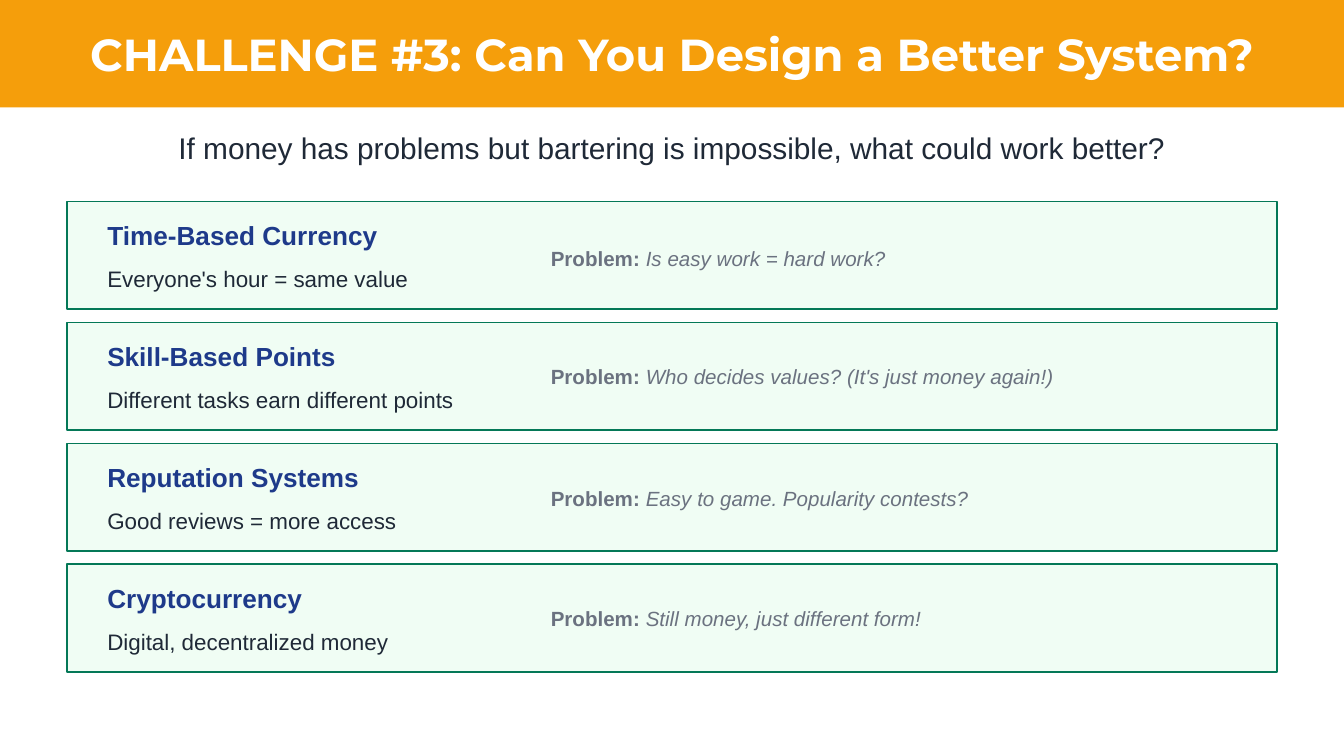
import pptx
import pptx.dml.color
import pptx.enum.shapes
import pptx.enum.text
import pptx.util

RGBColor = pptx.dml.color.RGBColor
PP_ALIGN = pptx.enum.text.PP_ALIGN

PX = 4572  # EMU per px, 200 px to the inch
SLIDE_WIDTH, SLIDE_HEIGHT = 2000, 1125

ORANGE = RGBColor(0xF5, 0x9E, 0x0B)
WHITE = RGBColor(0xFF, 0xFF, 0xFF)
MINT = RGBColor(0xF0, 0xFD, 0xF4)
GREEN = RGBColor(0x04, 0x78, 0x57)
NAVY = RGBColor(0x1E, 0x3A, 0x8A)
INK = RGBColor(0x1F, 0x29, 0x37)
GRAY = RGBColor(0x6B, 0x72, 0x80)

MARGIN = 100
CONTENT_WIDTH = SLIDE_WIDTH - 2 * MARGIN
BAND_HEIGHT = 160
CARD_TOP, CARD_HEIGHT, CARD_PITCH = 300, 160, 180

# Name, idea, problem, top of the problem line within its card
SYSTEMS = [
    ("Time-Based Currency", "Everyone's hour = same value",
     "Is easy work = hard work?", 44),
    ("Skill-Based Points", "Different tasks earn different points",
     "Who decides values? (It's just money again!)", 40),
    ("Reputation Systems", "Good reviews = more access",
     "Easy to game. Popularity contests?", 42),
    ("Cryptocurrency", "Digital, decentralized money",
     "Still money, just different form!", 40),
]


def px(*lengths):
    return [pptx.util.Emu(length * PX) for length in lengths]


def add_rect(slide, left, top, width, height, fill, border=None):
    rect = slide.shapes.add_shape(
        pptx.enum.shapes.MSO_SHAPE.RECTANGLE, *px(left, top, width, height))
    rect.shadow.inherit = False
    rect.fill.solid()
    rect.fill.fore_color.rgb = fill
    if border is None:
        rect.line.fill.background()
    else:
        rect.line.color.rgb = border
        rect.line.width = pptx.util.Pt(1)
    return rect


def add_run(paragraph, text, *, size, color, font="Arial", bold=False, italic=False):
    run = paragraph.add_run()
    run.text = text
    run.font.name = font
    run.font.size = pptx.util.Pt(size)
    run.font.color.rgb = color
    run.font.bold = bold
    run.font.italic = italic


def prepare_frame(shape, align):
    """Set wrapping and anchoring, and return the first paragraph."""
    frame = shape.text_frame
    frame.word_wrap = True
    frame.auto_size = pptx.enum.text.MSO_AUTO_SIZE.NONE
    frame.vertical_anchor = pptx.enum.text.MSO_ANCHOR.MIDDLE
    paragraph = frame.paragraphs[0]
    paragraph.alignment = align
    return paragraph


def add_text(slide, text, left, top, width, height, *, align=PP_ALIGN.LEFT, **style):
    box = slide.shapes.add_textbox(*px(left, top, width, height))
    paragraph = prepare_frame(box, align)
    add_run(paragraph, text, **style)
    return paragraph


def add_header(slide):
    band = add_rect(slide, 0, 0, SLIDE_WIDTH, BAND_HEIGHT, ORANGE)
    title = slide.shapes.title
    title._element.addprevious(band._element)  # keep the band behind the title
    title.left, title.top, title.width, title.height = px(MARGIN, 30, CONTENT_WIDTH, 100)
    add_run(prepare_frame(title, PP_ALIGN.CENTER),
            "CHALLENGE #3: Can You Design a Better System?",
            size=24, color=WHITE, font="Montserrat", bold=True)


def add_system_card(slide, top, name, idea, problem, problem_offset):
    add_rect(slide, MARGIN, top, CONTENT_WIDTH, CARD_HEIGHT, MINT, GREEN)
    add_text(slide, name, 140, top + 20, 600, 60, size=14, color=NAVY, bold=True)
    add_text(slide, idea, 140, top + 85, 600, 60, size=12, color=INK)
    problem_line = add_text(slide, "Problem: ", 800, top + problem_offset, 1040, 80,
                            size=11, color=GRAY, bold=True)
    add_run(problem_line, problem, size=11, color=GRAY, italic=True)


def main():
    deck = pptx.Presentation()
    deck.slide_width, deck.slide_height = px(SLIDE_WIDTH, SLIDE_HEIGHT)
    slide = deck.slides.add_slide(deck.slide_layouts.get_by_name("Title Only"))

    add_header(slide)
    add_text(slide,
             "If money has problems but bartering is impossible, what could work better?",
             MARGIN, 190, CONTENT_WIDTH, 60, align=PP_ALIGN.CENTER, size=16, color=INK)
    for row, system in enumerate(SYSTEMS):
        add_system_card(slide, CARD_TOP + row * CARD_PITCH, *system)

    deck.save("out.pptx")


if __name__ == "__main__":
    main()
